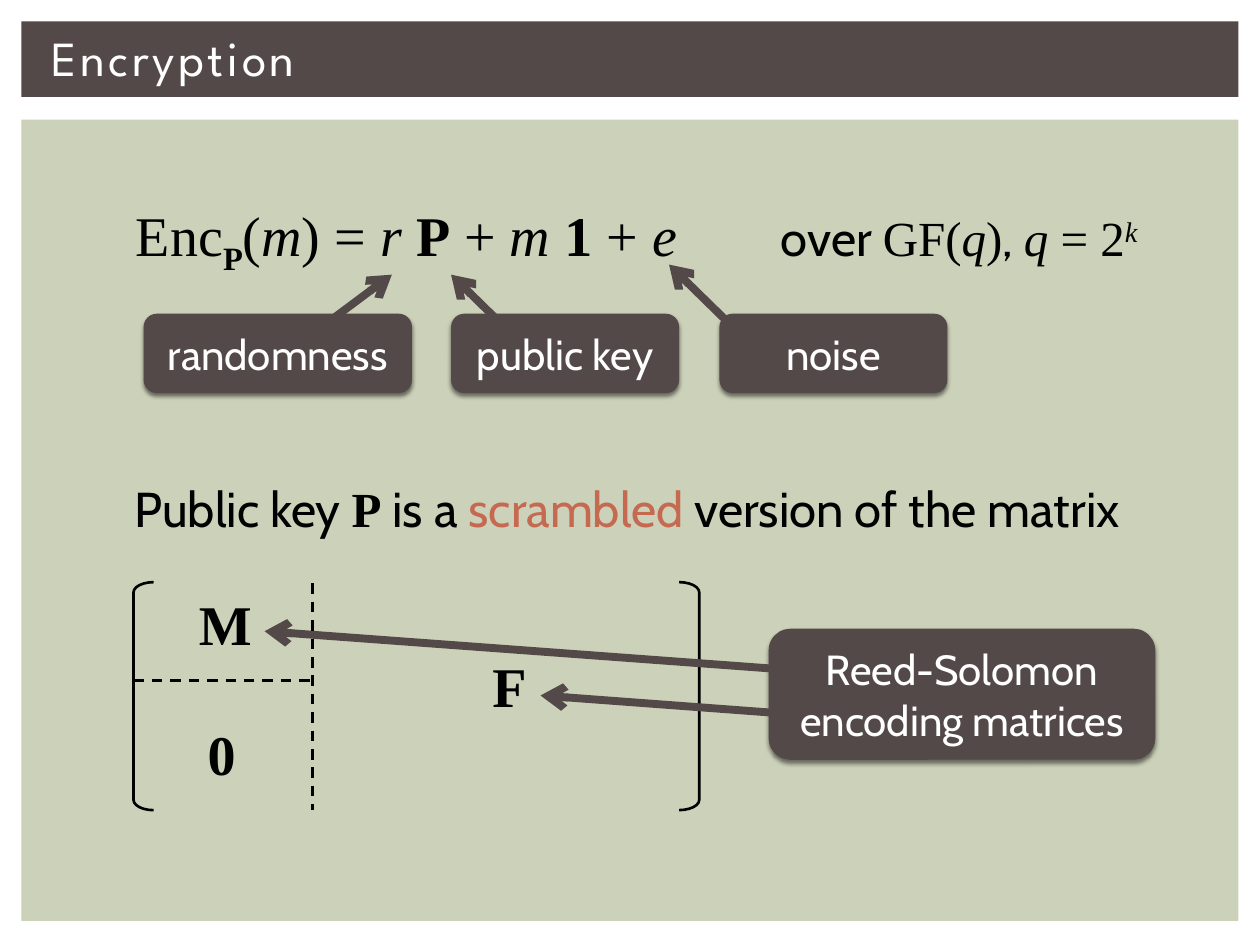
"""Build the slide on encryption with a scrambled public key matrix."""
from lxml import etree
from pptx import Presentation
from pptx.dml.color import RGBColor
from pptx.enum.dml import MSO_LINE
from pptx.enum.shapes import MSO_CONNECTOR, MSO_SHAPE
from pptx.enum.text import MSO_ANCHOR, PP_ALIGN
from pptx.oxml.ns import qn
from pptx.util import Pt

RECT, ROUND = MSO_SHAPE.RECTANGLE, MSO_SHAPE.ROUNDED_RECTANGLE
LEFT, RIGHT = MSO_SHAPE.LEFT_BRACKET, MSO_SHAPE.RIGHT_BRACKET
STRAIGHT, DASH = MSO_CONNECTOR.STRAIGHT, MSO_LINE.DASH
MIDDLE, CENTER = MSO_ANCHOR.MIDDLE, PP_ALIGN.CENTER
PX = 9144
DARK, SAGE, RED, BLACK, WHITE = "534949", "CCD1B9", "C66951", "000000", "FFFFFF"
SANS, SERIF, HEAD = "Cabin", "Times New Roman", "League Spartan"
hue = RGBColor.from_string

deck = Presentation()
deck.slide_width, deck.slide_height = 1000 * PX, 750 * PX
slide = deck.slides.add_slide(deck.slide_layouts[6])
shapes = slide.shapes


def write(spot, size, runs):
    """Add a line of text; marks are b, i, sub, sup, sans and red."""
    box = shapes.add_textbox(*[v * PX for v in spot])
    box.text_frame.word_wrap = False
    line = box.text_frame.paragraphs[0]
    line.font.size = Pt(size)
    for text, *marks in runs:
        run = line.add_run()
        run.text = text
        font = run.font
        font.name = SANS if "sans" in marks else SERIF
        font.color.rgb = hue(RED if "red" in marks else BLACK)
        font.bold, font.italic = "b" in marks, "i" in marks
        for mark, base in (("sub", "-25000"), ("sup", "30000")):
            if mark in marks:
                font._element.set("baseline", base)


def link(ends, color, width, dash=False):
    """Add a dashed rule or a solid arrow."""
    line = shapes.add_connector(STRAIGHT, *[v * PX for v in ends])
    line.line.color.rgb = hue(color)
    line.line.width = Pt(width)
    if dash:
        line.line.dash_style = DASH
    else:
        etree.SubElement(line.line._get_or_add_ln(), qn("a:tailEnd"), type="arrow")
    etree.SubElement(line._element.spPr, qn("a:effectLst"))


for top, high, color in ((95, 636, SAGE), (17, 60, DARK)):
    panel = shapes.add_shape(RECT, 17 * PX, top * PX, 966 * PX, high * PX)
    panel.shadow.inherit = False
    panel.fill.solid()
    panel.fill.fore_color.rgb = hue(color)
    panel.line.fill.background()

title = shapes.add_textbox(31 * PX, 16 * PX, 940 * PX, 59 * PX)
frame = title.text_frame
frame.word_wrap = True
frame.vertical_anchor = MIDDLE
run = frame.paragraphs[0].add_run()
run.text = "Encryption"
run.font.size, run.font.name = Pt(28), HEAD
run.font.color.rgb = hue(WHITE)
run.font._element.set("spc", "200")

write((98, 154, 452, 64), 32, [
    ("Enc",), ("P", "b", "sub"), ("(",), ("m", "i"), (") = ",), ("r ", "i"),
    ("P", "b"), (" + ",), ("m ", "i"), ("1", "b"), (" + ",), ("e", "i")])
write((610, 160, 316, 57), 28, [
    ("over ", "sans"), ("GF(",), ("q", "i"), (")",), (", ", "sans"),
    ("q", "i"), (" = 2",), ("k", "i", "sup")])
write((97, 375, 836, 57), 28, [
    ("Public key ", "sans"), ("P", "b"), (" is a ", "sans"),
    ("scrambled", "sans", "red"), (" version of the matrix", "sans")])

for kind, left in ((LEFT, 106), (RIGHT, 539)):
    edge = shapes.add_shape(kind, left * PX, 462 * PX, 16 * PX, 181 * PX)
    edge.adjustments[0] = 0.51
    edge.shadow.inherit = False
    edge.fill.background()
    edge.line.color.rgb = hue(BLACK)
    edge.line.width = Pt(1.5)

for text, spot in (("M", (148, 463, 61, 64)), ("F", (381, 512, 48, 64)),
                   ("0", (155, 566, 41, 64))):
    write(spot, 32, [(text, "b")])

for text, spot in (("public key", (358, 249, 181, 63)),
                   ("randomness", (114, 249, 213, 63)),
                   ("noise", (571, 249, 181, 63)),
                   ("Reed-Solomon\nencoding matrices", (610, 499, 307, 104))):
    label = shapes.add_shape(ROUND, *[v * PX for v in spot])
    label.fill.solid()
    label.fill.fore_color.rgb = hue(DARK)
    label.line.fill.background()
    label.shadow.inherit = False
    glow = label._element.spPr.find(qn("a:effectLst"))
    shade = etree.SubElement(glow, qn("a:outerShdw"), blurRad="31750",
                             dist="25400", dir="5400000", rotWithShape="0")
    tint = etree.SubElement(shade, qn("a:srgbClr"), val=BLACK)
    etree.SubElement(tint, qn("a:alpha"), val="50000")
    label.text_frame.text = text
    label.text_frame.vertical_anchor = MIDDLE
    for line in label.text_frame.paragraphs:
        line.alignment = CENTER
        line.font.size, line.font.name = Pt(24), SANS
        line.font.color.rgb = hue(WHITE)

for ends in ((248, 265, 311, 218), (406, 265, 358, 218), (579, 257, 531, 210),
             (618, 566, 429, 552), (618, 531, 210, 501)):
    link(ends, DARK, 4.5)
for ends in ((106, 540, 248, 540), (248, 463, 248, 643)):
    link(ends, BLACK, 1.5, dash=True)

deck.save("out.pptx")
